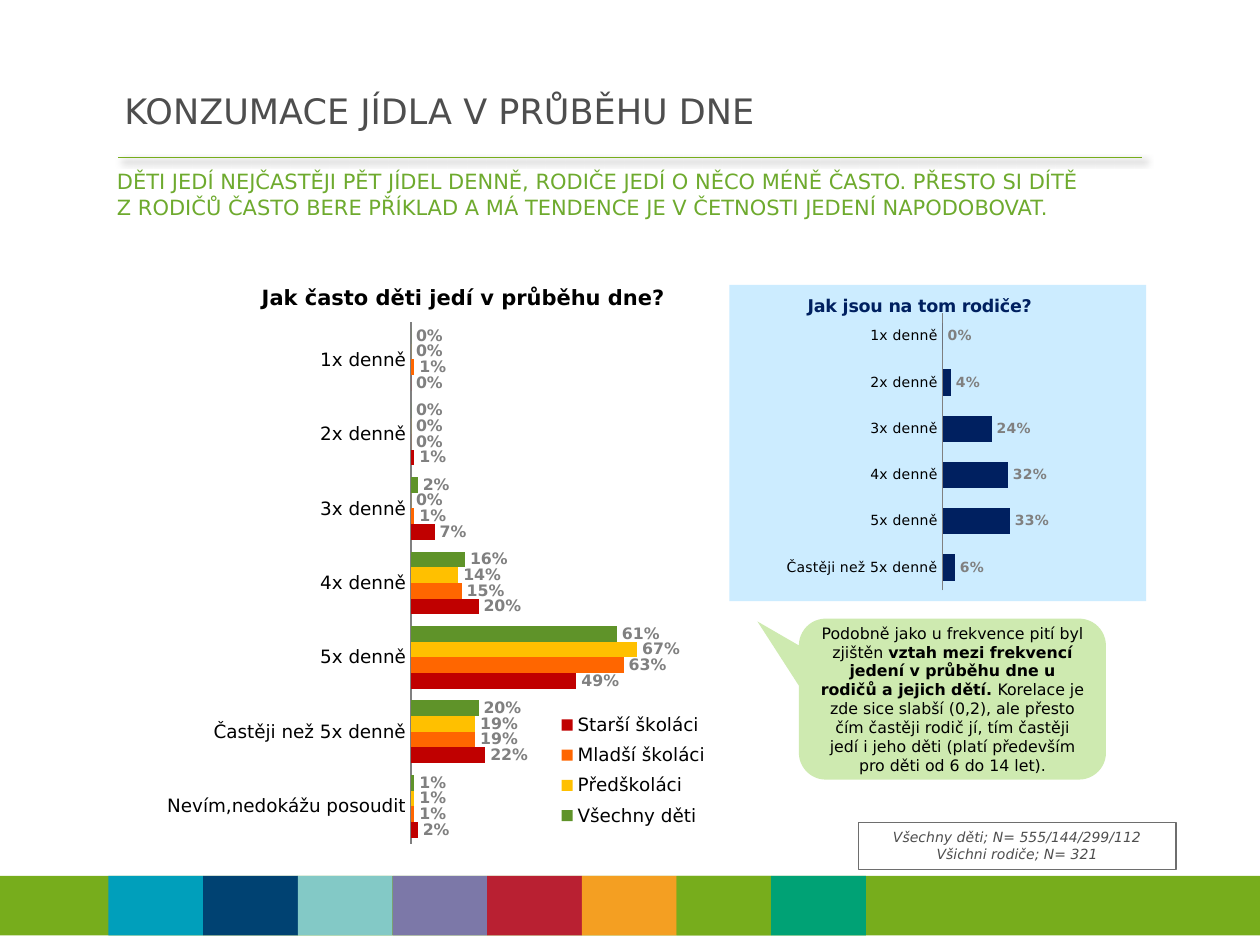
import copy
import pptx
import pptx.chart.data
import pptx.dml.color
import pptx.enum.chart
import pptx.enum.shapes
import pptx.enum.text
import pptx.oxml
import pptx.oxml.ns
import pptx.util

Pt = pptx.util.Pt
RGBColor = pptx.dml.color.RGBColor
MSO_SHAPE = pptx.enum.shapes.MSO_SHAPE
PP_ALIGN = pptx.enum.text.PP_ALIGN
MSO_ANCHOR = pptx.enum.text.MSO_ANCHOR
nsdecls = pptx.oxml.ns.nsdecls

FONT = "DejaVu Sans"
BLACK = RGBColor(0x00, 0x00, 0x00)
GRAY = RGBColor(0x80, 0x80, 0x80)
DARK_GRAY = RGBColor(0x4E, 0x4E, 0x4E)
BORDER_GRAY = RGBColor(0x6E, 0x6E, 0x6E)
GREEN = RGBColor(0x77, 0xAD, 0x1C)
TEXT_GREEN = RGBColor(0x6E, 0xAA, 0x2E)
PALE_GREEN = RGBColor(0xCE, 0xEA, 0xB0)
NAVY = RGBColor(0x00, 0x20, 0x60)
PALE_BLUE = RGBColor(0xCC, 0xEC, 0xFF)
CHART_GREEN = RGBColor(0x5F, 0x93, 0x29)
YELLOW = RGBColor(0xFF, 0xC0, 0x00)
ORANGE = RGBColor(0xFF, 0x66, 0x00)
RED = RGBColor(0xC0, 0x00, 0x00)
STRIPES = [
    RGBColor(0x00, 0x9F, 0xBB), RGBColor(0x00, 0x42, 0x72),
    RGBColor(0x83, 0xC9, 0xC6), RGBColor(0x7C, 0x78, 0xA8),
    RGBColor(0xB9, 0x20, 0x32), RGBColor(0xF4, 0x9F, 0x22),
    GREEN, RGBColor(0x00, 0xA2, 0x75),
]


def style_font(font, size, color, **extra):
    font.color.rgb = color
    for name, value in {"name": FONT, "size": Pt(size), **extra}.items():
        setattr(font, name, value)


def set_layout(element, previous, position, target=""):
    for old in element.xpath("c:layout"):
        element.remove(old)
    x_y = "".join(f'<c:{key}Mode val="edge"/>' for key in "xy")
    values = "".join(f'<c:{key} val="{value}"/>' for key, value in zip("xywh", position))
    layout = pptx.oxml.parse_xml(
        f'<c:layout {nsdecls("c")}><c:manualLayout>{target}{x_y}{values}'
        "</c:manualLayout></c:layout>")
    if previous:
        element.xpath(previous)[0].addnext(layout)
    else:
        element.insert(0, layout)


presentation = pptx.Presentation()
presentation.slide_width = Pt(720)
presentation.slide_height = Pt(540)
slide = presentation.slides.add_slide(presentation.slide_layouts[6])
shapes = slide.shapes

rule = shapes.add_connector(
    pptx.enum.shapes.MSO_CONNECTOR.STRAIGHT, Pt(67.5), Pt(90), Pt(652.5), Pt(90))
rule.line.color.rgb = GREEN
rule.line.width = Pt(0.75)
rule._element.spPr.append(pptx.oxml.parse_xml(
    f'<a:effectLst {nsdecls("a")}><a:outerShdw blurRad="50800" dist="38100" dir="2700000">'
    '<a:srgbClr val="000000"><a:alpha val="40000"/></a:srgbClr>'
    "</a:outerShdw></a:effectLst>"))

bands = [(0, 720, GREEN)]
bands += [(62 + 54.1 * i, 54.1, color) for i, color in enumerate(STRIPES)]
for left, width, color in bands:
    band = shapes.add_shape(MSO_SHAPE.RECTANGLE, Pt(left), Pt(500.5), Pt(width), Pt(34))
    band.shadow.inherit = False
    band.fill.solid()
    band.fill.fore_color.rgb = color
    band.line.fill.background()

title = shapes.add_textbox(Pt(64), Pt(44.5), Pt(638.5), Pt(37))
subtitle = shapes.add_textbox(Pt(59.75), Pt(93), Pt(635), Pt(39.5))

children_series = [
    ("Všechny děti", CHART_GREEN, (0, 0, 0.02, 0.16, 0.61, 0.2, 0.01)),
    ("Předškoláci", YELLOW, (0, 0, 0, 0.14, 0.67, 0.19, 0.01)),
    ("Mladší školáci", ORANGE, (0.01, 0, 0.01, 0.15, 0.63, 0.19, 0.01)),
    ("Starší školáci", RED, (0, 0.01, 0.07, 0.2, 0.49, 0.22, 0.02)),
]
parents_series = [("Series 1", NAVY, (0, 0.04, 0.24, 0.32, 0.33, 0.06))]
categories = [f"{count}x denně" for count in range(1, 6)] + ["Častěji než 5x denně"]
charts = [
    {"at": (0, 149.75, 433.5, 337.75), "title": "Jak často děti jedí v průběhu dne?",
     "title_size": 12, "title_color": BLACK, "title_at": (0.34, 0.03),
     "categories": categories + ["Nevím,nedokážu posoudit"], "series": children_series,
     "axis_size": 10.5, "label_size": 9, "plot_at": (0.542, 0.102, 0.445, 0.882),
     "legend_at": (0.73, 0.75, 0.21, 0.22), "fill": None},
    {"at": (416.75, 162.75, 238.25, 180.75), "title": "Jak jsou na tom rodiče?",
     "title_size": 10, "title_color": NAVY, "title_at": (0.18, 0.02),
     "categories": categories, "series": parents_series,
     "axis_size": 8, "label_size": 8, "plot_at": (0.569, 0.09, 0.488, 0.877),
     "legend_at": None, "fill": PALE_BLUE},
]
for details in charts:
    data = pptx.chart.data.CategoryChartData()
    data.categories = details["categories"]
    for name, color, values in details["series"]:
        data.add_series(name, values)
    chart = shapes.add_chart(
        pptx.enum.chart.XL_CHART_TYPE.BAR_CLUSTERED, *map(Pt, details["at"]), data).chart
    style_font(chart.font, 18, BLACK)
    chart.has_title = True
    chart.chart_title.include_in_layout = False
    chart.chart_title.text_frame.text = details["title"]
    style_font(chart.chart_title.text_frame.paragraphs[0].runs[0].font,
               details["title_size"], details["title_color"], bold=True)
    set_layout(chart.chart_title._element, "c:tx", details["title_at"])
    set_layout(chart._chartSpace.xpath("c:chart/c:plotArea")[0], None,
               details["plot_at"], '<c:layoutTarget val="inner"/>')

    category_axis, value_axis = chart.category_axis, chart.value_axis
    category_axis.reverse_order = True
    category_axis.major_tick_mark = pptx.enum.chart.XL_TICK_MARK.NONE
    category_axis.format.line.color.rgb = GRAY
    category_axis.format.line.width = Pt(0.75)
    style_font(category_axis.tick_labels.font, details["axis_size"], BLACK)
    for name, value in {"minimum_scale": 0, "maximum_scale": 1,
                        "has_major_gridlines": False, "visible": False}.items():
        setattr(value_axis, name, value)

    plot = chart.plots[0]
    for name, value in {"gap_width": 75, "overlap": 0, "vary_by_categories": False}.items():
        setattr(plot, name, value)
    for series, (name, color, values) in zip(plot.series, details["series"]):
        series.format.fill.solid()
        series.format.fill.fore_color.rgb = color
        labels = series.data_labels
        for key, value in {"show_value": True, "number_format": "0%",
                           "number_format_is_linked": False,
                           "position": pptx.enum.chart.XL_LABEL_POSITION.OUTSIDE_END}.items():
            setattr(labels, key, value)
        style_font(labels.font, details["label_size"], GRAY, bold=True)

    chart.has_legend = details["legend_at"] is not None
    if chart.has_legend:
        chart.legend.position = pptx.enum.chart.XL_LEGEND_POSITION.RIGHT
        chart.legend.include_in_layout = False
        style_font(chart.legend.font, 10.5, BLACK)
        set_layout(chart.legend._element, "c:legendPos", details["legend_at"])
    if details["fill"]:
        chart._chartSpace.xpath("c:chart")[0].addnext(pptx.oxml.parse_xml(
            f'<c:spPr {nsdecls("c", "a")}><a:solidFill><a:srgbClr val="{details["fill"]}"/>'
            "</a:solidFill><a:ln><a:noFill/></a:ln></c:spPr>"))

callout = shapes.add_shape(
    MSO_SHAPE.ROUNDED_RECTANGULAR_CALLOUT, Pt(456.5), Pt(353.5), Pt(175.5), Pt(92))
for index, value in enumerate((-0.635, -0.482, 0.167)):
    callout.adjustments[index] = value
callout.fill.solid()
callout.fill.fore_color.rgb = PALE_GREEN
callout.line.fill.background()

sample = shapes.add_shape(MSO_SHAPE.RECTANGLE, Pt(490.5), Pt(470), Pt(181.5), Pt(26.75))
sample.fill.background()
sample.line.color.rgb = BORDER_GRAY
sample.line.width = Pt(0.75)
for shape in (callout, sample):
    shape.shadow.inherit = False

LEFT, CENTER = PP_ALIGN.LEFT, PP_ALIGN.CENTER
TOP, MIDDLE = MSO_ANCHOR.TOP, MSO_ANCHOR.MIDDLE
texts = [
    (title, MIDDLE, LEFT, 20, DARK_GRAY, {}, [[("KONZUMACE JÍDLA V PRŮBĚHU DNE", False)]]),
    (subtitle, TOP, LEFT, 12, TEXT_GREEN, {}, [[
        ("DĚTI JEDÍ NEJČASTĚJI PĚT JÍDEL DENNĚ, RODIČE JEDÍ O NĚCO MÉNĚ ČASTO. PŘESTO SI DÍTĚ\n"
         "Z RODIČŮ ČASTO BERE PŘÍKLAD A MÁ TENDENCE JE V ČETNOSTI JEDENÍ NAPODOBOVAT.", False)]]),
    (callout, MIDDLE, CENTER, 9, BLACK, {}, [[
        ("Podobně jako u frekvence pití byl zjištěn ", False),
        ("vztah mezi frekvencí jedení v průběhu dne u rodičů a jejich dětí. ", True),
        ("Korelace je zde sice slabší (0,2), ale přesto\nčím častěji rodič jí, tím častěji "
         "jedí i jeho děti (platí především pro děti od 6 do 14 let).", False)]]),
    (sample, TOP, CENTER, 8, DARK_GRAY, {"italic": True}, [
        [("Všechny děti; N= 555/144/299/112", False)], [("Všichni rodiče; N= 321", False)]]),
]
for shape, anchor, alignment, size, color, extra, paragraphs in texts:
    frame = shape.text_frame
    frame.word_wrap = True
    frame.vertical_anchor = anchor
    for index, pieces in enumerate(paragraphs):
        paragraph = frame.add_paragraph() if index else frame.paragraphs[0]
        paragraph.alignment = alignment
        for text, bold in pieces:
            for number, line in enumerate(text.split("\n")):
                if number:
                    paragraph.add_line_break()
                    paragraph._p[-1].append(copy.deepcopy(run._r.rPr))
                run = paragraph.add_run()
                run.text = line
                style_font(run.font, size, color, bold=bold, **extra)

presentation.save("out.pptx")
